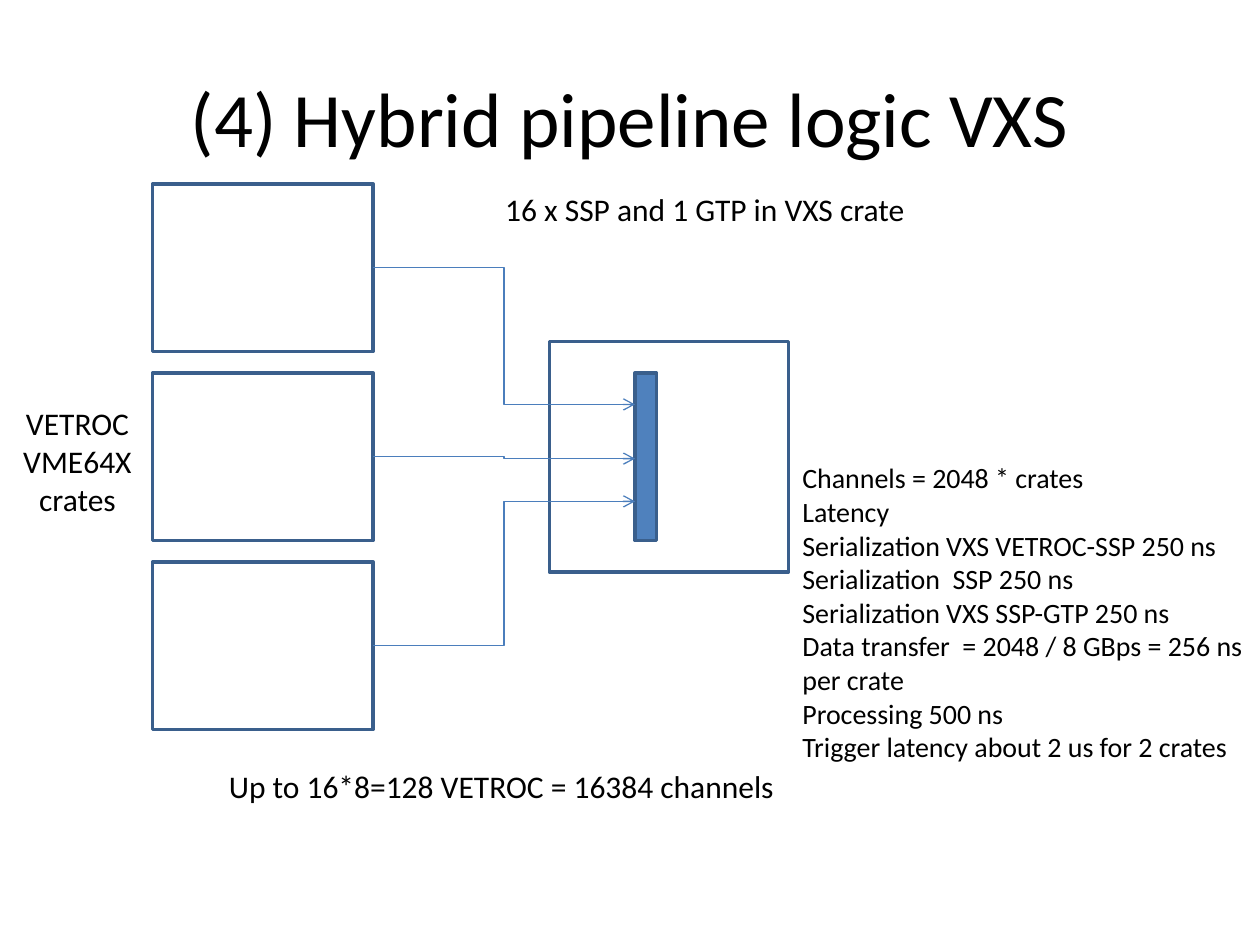
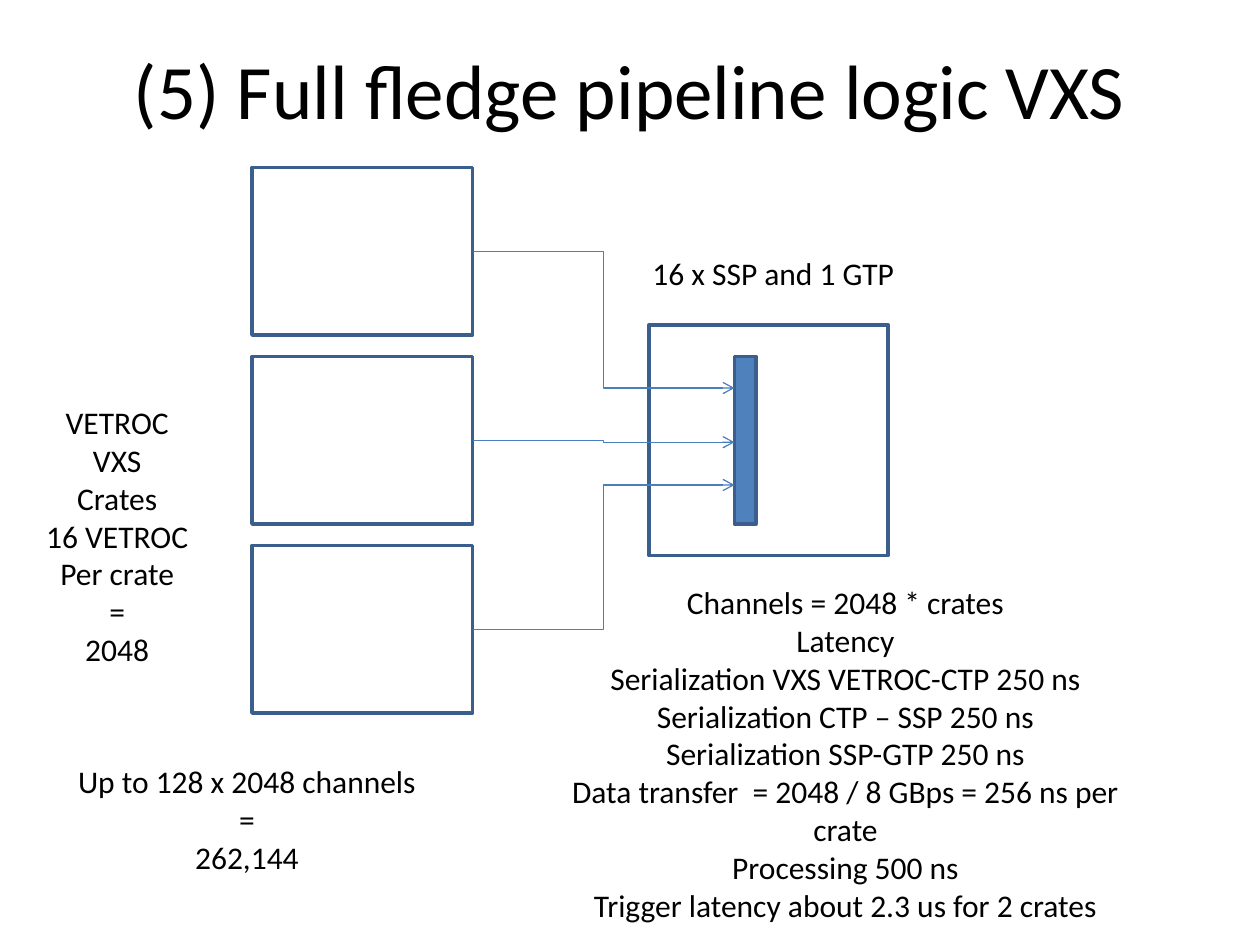
from lxml import etree
from pptx import Presentation
from pptx.dml.color import RGBColor
from pptx.enum.shapes import MSO_CONNECTOR, MSO_SHAPE
from pptx.enum.text import MSO_ANCHOR, PP_ALIGN
from pptx.oxml.ns import qn
from pptx.util import Inches, Pt

RECTANGLE = MSO_SHAPE.RECTANGLE
ELBOW = MSO_CONNECTOR.ELBOW
LEFT, CENTER = PP_ALIGN.LEFT, PP_ALIGN.CENTER
TOP, MIDDLE = MSO_ANCHOR.TOP, MSO_ANCHOR.MIDDLE

FONT = "Calibri"
BLACK = RGBColor(0x00, 0x00, 0x00)
BLUE = RGBColor(0x4F, 0x81, 0xBD)
OUTLINE = RGBColor(0x3A, 0x5F, 0x8C)
LINK = RGBColor(0x4B, 0x7E, 0xBC)

TITLE_ONLY = 5
CRATE_W, CRATE_H, CRATE_STEP = 1.75, 1.33, 1.5
# Heights at which the links enter the trigger board, below the diagram's top
LINK_ENDS = (1.75, 2.18, 2.52)


def write(frame, lines, size=18, align=CENTER, anchor=TOP, wrap=True):
    """Fill a text frame with one paragraph per line."""
    frame.word_wrap = wrap
    frame.vertical_anchor = anchor
    for index, line in enumerate(lines):
        paragraph = frame.paragraphs[0] if index == 0 else frame.add_paragraph()
        paragraph.alignment = align
        run = paragraph.add_run()
        run.text = line
        run.font.name = FONT
        run.font.size = Pt(size)
        run.font.color.rgb = BLACK


def add_label(slide, box, lines, **text_format):
    label = slide.shapes.add_textbox(*map(Inches, box))
    write(label.text_frame, lines, **text_format)


def add_titled_slide(prs, title, top):
    slide = prs.slides.add_slide(prs.slide_layouts[TITLE_ONLY])
    heading = slide.shapes.title
    heading.left, heading.top = Inches(0.5), Inches(top)
    heading.width, heading.height = Inches(9), Inches(1.25)
    write(heading.text_frame, [title], size=44, anchor=MIDDLE)
    return slide


def add_box(slide, box, fill=None):
    rect = slide.shapes.add_shape(RECTANGLE, *map(Inches, box))
    rect.shadow.inherit = False
    if fill is None:
        rect.fill.background()
    else:
        rect.fill.solid()
        rect.fill.fore_color.rgb = fill
    rect.line.color.rgb = OUTLINE
    rect.line.width = Pt(2)


def add_link(slide, start, end):
    """Draw a bent arrow from one point to another."""
    link = slide.shapes.add_connector(ELBOW, *map(Inches, start + end))
    link.line.color.rgb = LINK
    link.line.width = Pt(0.75)
    properties = link.element.spPr
    etree.SubElement(properties.find(qn("a:ln")), qn("a:tailEnd"), type="arrow")
    etree.SubElement(properties, qn("a:effectLst"))


def add_crate_diagram(slide, left, top):
    """Three front-end crates linked to the board in the trigger crate."""
    crate_tops = [top + CRATE_STEP * row for row in range(len(LINK_ENDS))]
    board_left = left + 3.83

    for crate_top in crate_tops:
        add_box(slide, (left, crate_top, CRATE_W, CRATE_H))
    add_box(slide, (left + 3.15, top + 1.25, 1.9, 1.83))
    add_box(slide, (board_left, top + CRATE_STEP, 0.17, CRATE_H), fill=BLUE)

    for crate_top, link_end in zip(crate_tops, LINK_ENDS):
        add_link(slide, (left + CRATE_W, crate_top + CRATE_H / 2),
                 (board_left, top + link_end))


def build_hybrid_slide(prs):
    slide = add_titled_slide(prs, "(4) Hybrid pipeline logic VXS", 0.3)
    add_crate_diagram(slide, 1.21, 1.46)

    # Crate captions and capacity
    add_label(slide, (0.08, 3.16, 1.07, 1.01),
              ["VETROC", "VME64X", "crates"], wrap=False)
    add_label(slide, (3.89, 1.46, 3.41, 0.4),
              ["16 x SSP and 1 GTP in VXS crate"], wrap=False)
    add_label(slide, (1.44, 6.04, 5.08, 0.4),
              ["Up to 16*8=128 VETROC = 16384 channels"])

    # Latency budget
    add_label(slide, (6.27, 3.61, 3.73, 3.43), [
        "Channels = 2048 * crates",
        "Latency",
        "Serialization VXS VETROC-SSP 250 ns",
        "Serialization  SSP 250 ns",
        "Serialization VXS SSP-GTP 250 ns",
        "Data transfer  = 2048 / 8 GBps = 256 ns per crate",
        "Processing 500 ns",
        "Trigger latency about 2 us for 2 crates",
    ], size=16, align=LEFT)


def build_full_slide(prs):
    slide = add_titled_slide(prs, "(5) Full fledge pipeline logic VXS", 0.08)
    add_crate_diagram(slide, 2, 1.33)

    # Crate captions and capacity
    add_label(slide, (0.23, 3.15, 1.4, 2.52),
              ["VETROC", "VXS", "Crates", "16 VETROC", "Per crate", "=", "2048"],
              wrap=False)
    add_label(slide, (5.08, 1.97, 2.14, 0.4),
              ["16 x SSP and 1 GTP"], align=LEFT, wrap=False)
    add_label(slide, (0.5, 6, 2.92, 1.01),
              ["Up to 128 x 2048 channels", "=", "262,144"])

    # Latency budget
    add_label(slide, (4.17, 4.58, 5.08, 3.74), [
        "Channels = 2048 * crates",
        "Latency",
        "Serialization VXS VETROC-CTP 250 ns",
        "Serialization CTP – SSP 250 ns",
        "Serialization SSP-GTP 250 ns",
        "Data transfer  = 2048 / 8 GBps = 256 ns per crate",
        "Processing 500 ns",
        "Trigger latency about 2.3 us for 2 crates",
    ])


def main():
    prs = Presentation()
    prs.slide_width, prs.slide_height = Inches(10), Inches(7.5)
    build_hybrid_slide(prs)
    build_full_slide(prs)
    prs.save("out.pptx")


if __name__ == "__main__":
    main()
